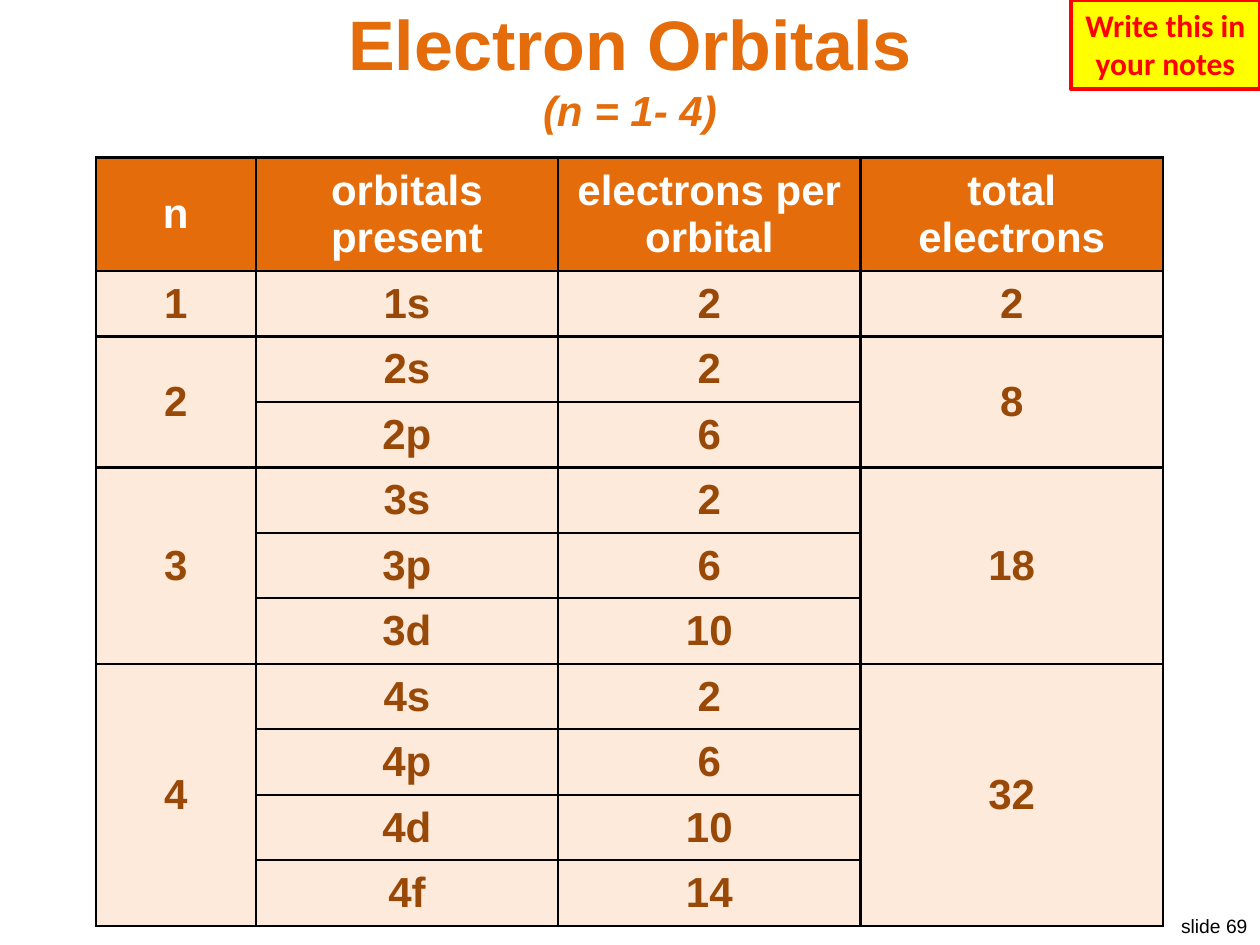
from lxml import etree
from pptx import Presentation
from pptx.dml.color import RGBColor
from pptx.enum import shapes, text
from pptx.oxml import ns
from pptx.util import Inches, Pt

COLORS = {
    "orange": "E46C0A",
    "brown": "984807",
    "peach": "FDEADA",
    "white": "FFFFFF",
    "black": "000000",
    "red": "FF0000",
    "yellow": "FFFF00",
}
HEADERS = ["n", "orbitals present", "electrons per orbital", "total electrons"]
SUBSHELLS = [("s", 2), ("p", 6), ("d", 10), ("f", 14)]
COLUMN_WIDTHS = [1.27, 2.4, 2.4, 2.4]
HEADER_HEIGHT, ROW_HEIGHT = 0.84, 0.52


def color(name):
    return RGBColor.from_string(COLORS[name])


def add_run(paragraph, words, size, color_name, font="Arial", bold=True, italic=False):
    run = paragraph.add_run()
    run.text = words
    run.font.name = font
    run.font.size = Pt(size)
    run.font.bold = bold
    run.font.italic = italic
    run.font.color.rgb = color(color_name)


def add_text_box(slide, left, top, width, height, alignment, wrap=True):
    """Add an empty text box and return its frame."""
    box = slide.shapes.add_textbox(Inches(left), Inches(top), Inches(width), Inches(height))
    frame = box.text_frame
    frame.word_wrap = wrap
    frame.paragraphs[0].alignment = alignment
    return frame


def add_title(slide):
    frame = add_text_box(slide, 0.2, 0.07, 9.6, 0.94, text.PP_ALIGN.CENTER)
    frame.vertical_anchor = text.MSO_ANCHOR.MIDDLE
    paragraph = frame.paragraphs[0]
    add_run(paragraph, "Electron Orbitals", 40, "orange")
    paragraph.add_line_break()
    add_run(paragraph, "(n = 1- 4)", 24, "orange", italic=True)


def add_slide_label(slide):
    frame = add_text_box(slide, 9.25, 7.21, 0.75, 0.29, text.PP_ALIGN.RIGHT, wrap=False)
    add_run(frame.paragraphs[0], "slide 69", 11, "black", bold=False)


def add_note(slide):
    note = slide.shapes.add_shape(
        shapes.MSO_SHAPE.RECTANGLE, Inches(8.5), Inches(0), Inches(1.5), Inches(0.71)
    )
    note.shadow.inherit = False
    note.fill.solid()
    note.fill.fore_color.rgb = color("yellow")
    note.line.color.rgb = color("red")
    note.line.width = Pt(2.25)
    frame = note.text_frame
    frame.word_wrap = True
    frame.vertical_anchor = text.MSO_ANCHOR.TOP
    frame.paragraphs[0].alignment = text.PP_ALIGN.CENTER
    add_run(frame.paragraphs[0], "Write this in your notes", 18, "red", font="Calibri")


def style_cell(cell, fill_name):
    """Fill the cell and draw its four borders."""
    cell.vertical_anchor = text.MSO_ANCHOR.MIDDLE
    cell.fill.solid()
    cell.fill.fore_color.rgb = color(fill_name)
    properties = cell._tc.get_or_add_tcPr()
    for position, side in enumerate(("a:lnL", "a:lnR", "a:lnT", "a:lnB")):
        border = etree.Element(ns.qn(side), w=str(Pt(1.5)))
        fill = etree.SubElement(border, ns.qn("a:solidFill"))
        etree.SubElement(fill, ns.qn("a:srgbClr"), val=COLORS["black"])
        properties.insert(position, border)


def write_cell(cell, words, color_name):
    paragraph = cell.text_frame.paragraphs[0]
    paragraph.alignment = text.PP_ALIGN.CENTER
    add_run(paragraph, str(words), 24, color_name)


def add_orbital_table(slide):
    """Each shell n has n subshells, so it takes n rows."""
    shells = range(1, 5)
    body_rows = sum(shells)
    table = slide.shapes.add_table(
        body_rows + 1, len(HEADERS), Inches(0.76), Inches(1.25),
        Inches(sum(COLUMN_WIDTHS)), Inches(HEADER_HEIGHT + body_rows * ROW_HEIGHT),
    ).table
    for column, width in zip(table.columns, COLUMN_WIDTHS):
        column.width = Inches(width)
    for index, row in enumerate(table.rows):
        row.height = Inches(ROW_HEIGHT if index else HEADER_HEIGHT)
        for cell in row.cells:
            style_cell(cell, "peach" if index else "orange")
    for index, header in enumerate(HEADERS):
        write_cell(table.cell(0, index), header, "white")

    first = 1
    for n in shells:
        subshells = SUBSHELLS[:n]
        total = sum(electrons for _, electrons in subshells)
        for index, words in ((0, n), (3, total)):
            if n > 1:
                table.cell(first, index).merge(table.cell(first + n - 1, index))
            write_cell(table.cell(first, index), words, "brown")
        for row, (letter, electrons) in enumerate(subshells, first):
            write_cell(table.cell(row, 1), f"{n}{letter}", "brown")
            write_cell(table.cell(row, 2), electrons, "brown")
        first += n


def main():
    presentation = Presentation()
    presentation.slide_width = Inches(10)
    presentation.slide_height = Inches(7.5)
    slide = presentation.slides.add_slide(presentation.slide_layouts[6])
    add_slide_label(slide)
    add_title(slide)
    add_orbital_table(slide)
    add_note(slide)
    presentation.save("out.pptx")


if __name__ == "__main__":
    main()
